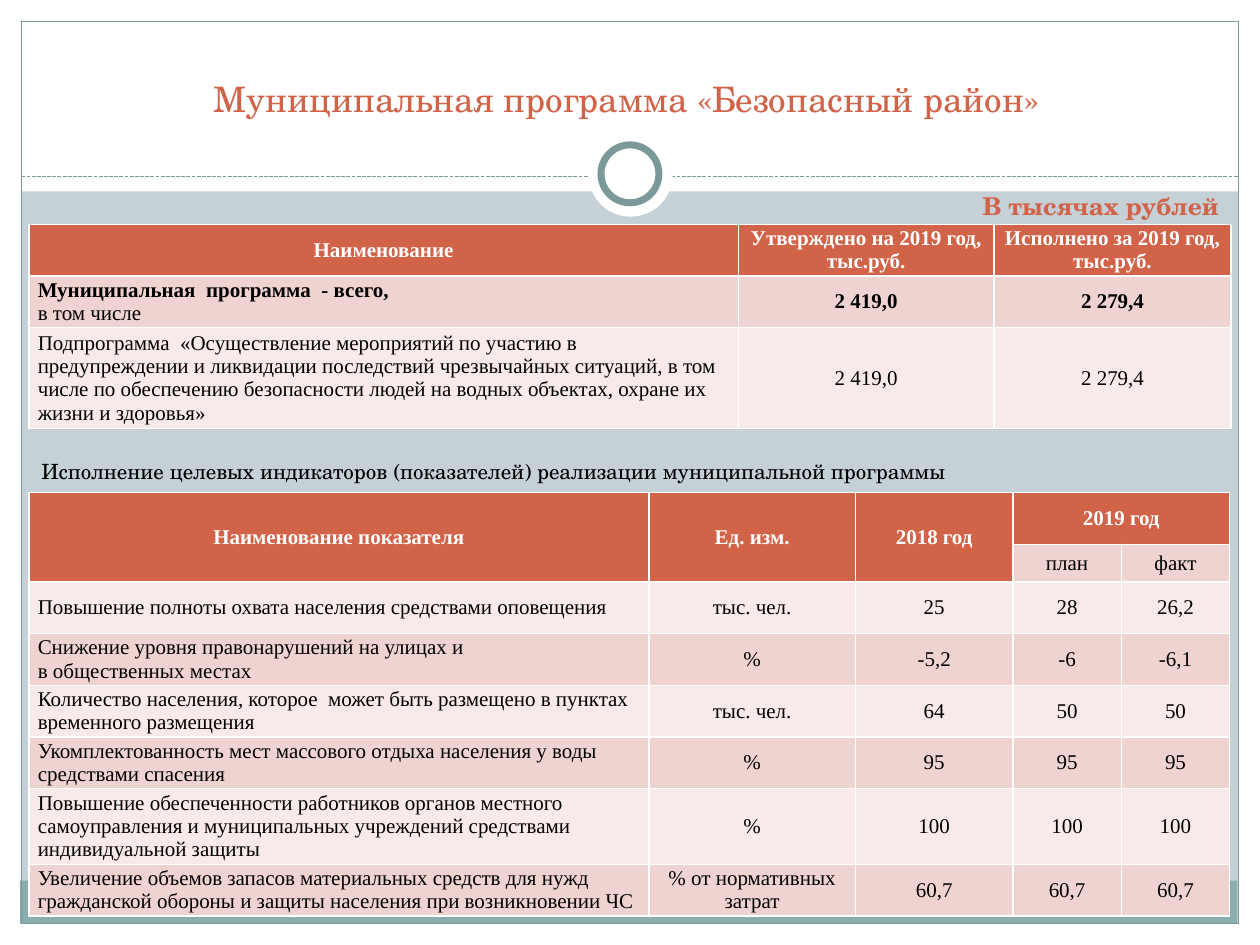
from dataclasses import dataclass

from lxml.etree import SubElement
from pptx import Presentation
from pptx.dml.color import RGBColor
from pptx.enum.dml import MSO_LINE
from pptx.enum.shapes import MSO_CONNECTOR, MSO_SHAPE
from pptx.enum.text import MSO_ANCHOR, PP_ALIGN
from pptx.oxml.ns import qn
from pptx.util import Inches, Pt


@dataclass(frozen=True)
class Theme:
    back: str = "C5D1D7"
    white: str = "FFFFFF"
    black: str = "000000"
    teal: str = "8CADAE"
    edge: str = "7C999A"
    rust: str = "D16349"
    bands: tuple = ("F7EAE9", "EED3D0")
    serif: str = "TeX Gyre Schola"
    roman: str = "Times New Roman"
    title: int = 20
    label: int = 14
    body: int = 12


THEME = Theme()
LEFT, CENTER, JUSTIFY = PP_ALIGN.LEFT, PP_ALIGN.CENTER, PP_ALIGN.JUSTIFY

BUDGET = [
    ["Наименование", "Утверждено на 2019 год, тыс.руб.",
     "Исполнено за 2019 год, тыс.руб."],
    ["Муниципальная  программа  - всего,\nв том числе", "2 419,0", "2 279,4"],
    ["Подпрограмма  «Осуществление мероприятий по участию в предупреждении "
     "и ликвидации последствий чрезвычайных ситуаций, в том числе по "
     "обеспечению безопасности людей на водных объектах, охране их жизни "
     "и здоровья»", "2 419,0", "2 279,4"],
]
GOALS = [
    ["Наименование показателя", "Ед. изм.", "2018 год", "2019 год", ""],
    ["", "", "", "план", "факт"],
    ["Повышение полноты охвата населения средствами оповещения",
     "тыс. чел.", "25", "28", "26,2"],
    ["Снижение уровня правонарушений на улицах и\nв общественных местах",
     "%", "-5,2", "-6", "-6,1"],
    ["Количество населения, которое  может быть размещено в пунктах "
     "временного размещения", "тыс. чел.", "64", "50", "50"],
    ["Укомплектованность мест массового отдыха населения у воды "
     "средствами спасения", "%", "95", "95", "95"],
    ["Повышение обеспеченности работников органов местного самоуправления "
     "и муниципальных учреждений средствами индивидуальной защиты",
     "%", "100", "100", "100"],
    ["Увеличение объемов запасов материальных средств для нужд гражданской "
     "обороны и защиты населения при возникновении ЧС",
     "% от нормативных затрат", "60,7", "60,7", "60,7"],
]


def apply(item, form):
    for name, value in form.items():
        setattr(item, name, value)


def paint(fill, color):
    fill.solid()
    fill.fore_color.rgb = RGBColor.from_string(color)


def write(para, text, color, align=LEFT, **form):
    para.alignment = align
    run = para.add_run()
    run.text = text
    apply(run.font, form)
    run.font.color.rgb = RGBColor.from_string(color)


def add_form(slide, kind, box, fill=None, line=None, width=0.75):
    shape = slide.shapes.add_shape(kind, *map(Inches, box))
    shape.shadow.inherit = False
    if fill:
        paint(shape.fill, fill)
    else:
        shape.fill.background()
    if line:
        paint(shape.line.fill, line)
        shape.line.width = Pt(width)
    else:
        shape.line.fill.background()


def add_rule(slide, left, right, top):
    ends = map(Inches, (left, top, right, top))
    rule = slide.shapes.add_connector(MSO_CONNECTOR.STRAIGHT, *ends)
    paint(rule.line.fill, THEME.edge)
    apply(rule.line, {"width": Pt(0.75), "dash_style": MSO_LINE.SQUARE_DOT})
    SubElement(rule.element.spPr, qn("a:effectLst"))


def add_text(slide, box, text, color, size, anchor=MSO_ANCHOR.TOP,
             align=LEFT, bold=False):
    frame = slide.shapes.add_textbox(*map(Inches, box)).text_frame
    apply(frame, {"word_wrap": True, "vertical_anchor": anchor})
    para = frame.paragraphs[0]
    write(para, text, color, align, name=THEME.serif, size=Pt(size), bold=bold)
    return para


def fill_cell(cell, text, fill, color, align, bold):
    apply(cell, {"margin_left": Inches(0.07), "margin_right": Inches(0.07),
                 "margin_top": 0, "margin_bottom": 0,
                 "vertical_anchor": MSO_ANCHOR.MIDDLE})
    paint(cell.fill, fill)
    frame = cell.text_frame
    for i, part in enumerate(text.split("\n")):
        para = frame.add_paragraph() if i else frame.paragraphs[0]
        write(para, part, color, align, name=THEME.roman,
              size=Pt(THEME.body), bold=bold and i == 0)


def add_grid(slide, box, data, cols, rows, spans=(), total=None):
    # The default table style supplies the white cell borders
    frame = slide.shapes.add_table(len(rows), len(cols), *map(Inches, box))
    grid = frame.table
    for col, width in zip(grid.columns, cols):
        col.width = Inches(width)
    for row, height in zip(grid.rows, rows):
        row.height = Inches(height)
    frame.height = Inches(box[3])
    for start, end in spans:
        grid.cell(*start).merge(grid.cell(*end))
    for r, line in enumerate(data):
        for c, text in enumerate(line):
            cell = grid.cell(r, c)
            if cell.is_spanned:
                continue
            head = r == 0
            fill = THEME.rust if head else THEME.bands[r % 2]
            color = THEME.white if head else THEME.black
            align = CENTER if head or c else JUSTIFY if r == total else LEFT
            fill_cell(cell, text, fill, color, align, head or r == total)


def add_frame(slide):
    rect, oval = MSO_SHAPE.RECTANGLE, MSO_SHAPE.OVAL
    # White margins and title band
    for box in ((0, 7.33, 10, 0.17), (0, 0, 10, 1.52),
                (0, 0, 0.17, 7.5), (9.83, 0, 0.17, 7.5)):
        add_form(slide, rect, box, THEME.white)
    # Footer band, border and dashed rule
    add_form(slide, rect, (0.16, 6.99, 9.66, 0.34), THEME.teal)
    add_form(slide, rect, (0.17, 0.17, 9.66, 7.16), line=THEME.edge)
    add_rule(slide, 0.17, 9.83, 1.4)
    # Ring
    add_form(slide, oval, (4.67, 1.05, 0.67, 0.67), THEME.white)
    add_form(slide, oval, (4.77, 1.15, 0.46, 0.46), THEME.white, THEME.edge, 4)


def main():
    deck = Presentation()
    apply(deck, {"slide_width": Inches(10), "slide_height": Inches(7.5)})
    slide = deck.slides.add_slide(deck.slide_layouts[6])
    paint(slide.background.fill, THEME.back)
    add_frame(slide)

    # Title and unit
    add_text(slide, (0.31, 0.47, 9.33, 0.53),
             "Муниципальная программа «Безопасный район»", THEME.rust,
             THEME.title, MSO_ANCHOR.BOTTOM, CENTER)
    add_text(slide, (7.7, 1.47, 2.27, 0.47), "В тысячах рублей",
             THEME.rust, THEME.label, bold=True)

    # Budget
    add_grid(slide, (0.23, 1.78, 9.53, 1.61), BUDGET,
             (5.63, 2.03, 1.88), [0.41] * 3, total=1)

    # Goals
    para = add_text(slide, (0.23, 3.59, 9.3, 0.39),
                    "Исполнение целевых индикаторов (показателей) реализации "
                    "муниципальной программы", THEME.black, THEME.body)
    para.space_before = Pt(2.4)
    add_grid(slide, (0.23, 3.91, 9.53, 3.33), GOALS,
             (4.92, 1.64, 1.25, 0.86, 0.86), [0.41, 0.3] + [0.41] * 6,
             [((0, c), (1, c)) for c in range(3)] + [((0, 3), (0, 4))])

    deck.save("out.pptx")


if __name__ == "__main__":
    main()
